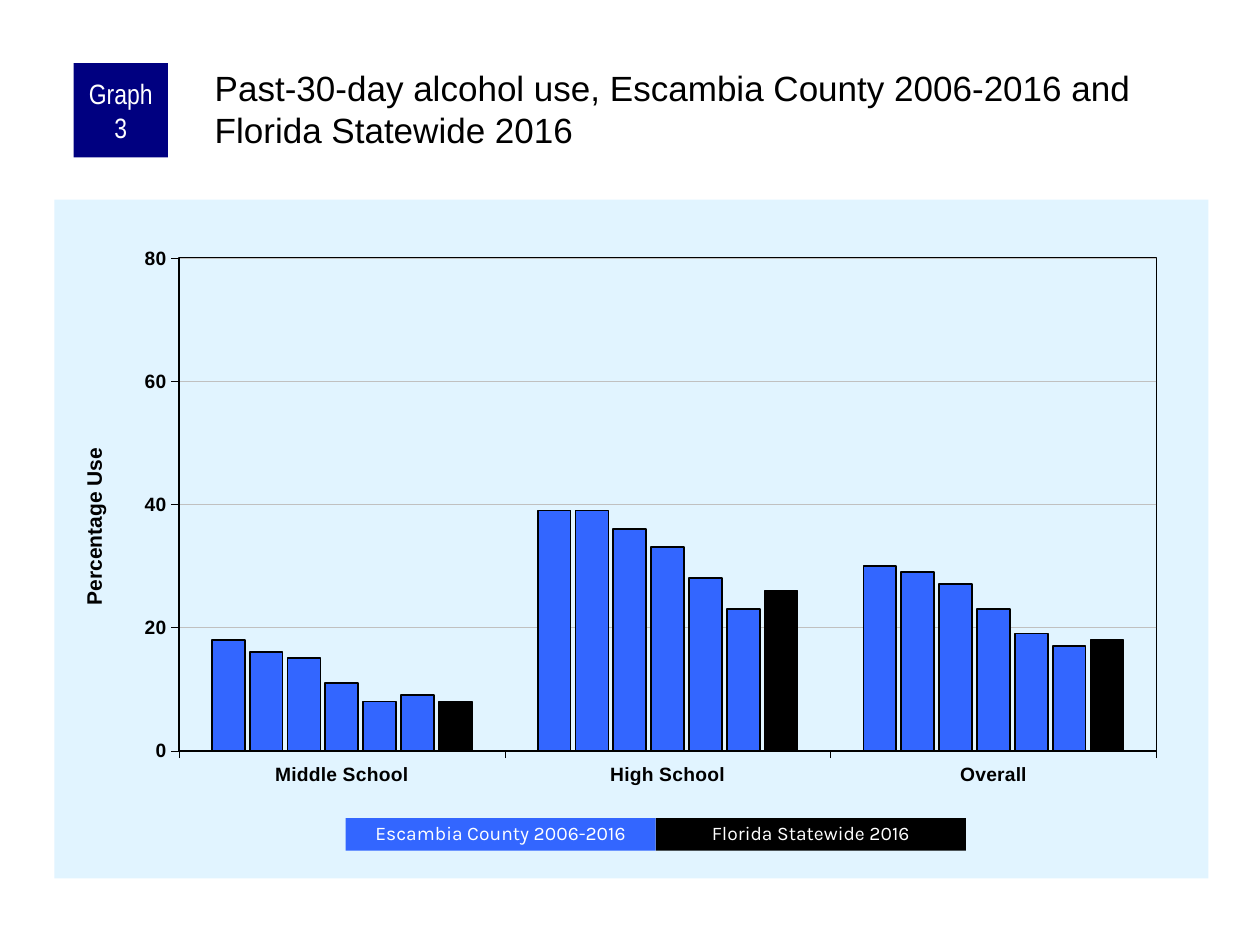
from lxml.etree import fromstring
from pptx import Presentation
from pptx.chart.data import CategoryChartData as Data
from pptx.dml.color import RGBColor
from pptx.enum.chart import XL_CHART_TYPE as Kind, XL_TICK_MARK as Tick
from pptx.enum.shapes import MSO_SHAPE as Shape
from pptx.enum.text import MSO_ANCHOR as Anchor, PP_ALIGN as Align
from pptx.oxml.ns import qn
from pptx.util import Pt

NAVY = RGBColor(0x00, 0x00, 0x80)
BLUE = RGBColor(0x33, 0x66, 0xFF)
PALE = RGBColor(0xE1, 0xF4, 0xFF)
GRAY = RGBColor(0xC0, 0xC0, 0xC0)
BLACK = RGBColor(0, 0, 0)
WHITE = RGBColor(0xFF, 0xFF, 0xFF)

LEVELS = ["Middle School", "High School", "Overall"]
RATES = [(18, 39, 30), (16, 39, 29), (15, 36, 27), (11, 33, 23),
         (8, 28, 19), (9, 23, 17), (8, 26, 18)]
SPACES = ('xmlns:c="http://schemas.openxmlformats.org/drawingml/2006/chart" '
          'xmlns:a="http://schemas.openxmlformats.org/drawingml/2006/main"')


def assign(item, **values):
    for name, value in values.items():
        setattr(item, name, value)


def style(font, size, color, name="Arial", bold=False):
    assign(font, size=Pt(size), name=name, bold=bold)
    font.color.rgb = color


def stroke(line, color, width):
    line.color.rgb = color
    line.width = Pt(width)


def write(shape, text, font, frame, para):
    body = shape.text_frame
    assign(body, word_wrap=True, **frame)
    first = body.paragraphs[0]
    assign(first, **para)
    run = first.add_run()
    run.text = text
    style(run.font, **font)


def block(slide, box, fill, text, font, frame, para):
    rect = slide.shapes.add_shape(Shape.RECTANGLE, *map(Pt, box))
    rect.shadow.inherit = False
    rect.fill.solid()
    rect.fill.fore_color.rgb = fill
    rect.line.fill.background()
    write(rect, text, font, dict(vertical_anchor=Anchor.MIDDLE, **frame),
          dict(alignment=Align.CENTER, **para))


def header(slide, left, top, width):
    block(slide, (left, top, 54, 54), NAVY, "Graph 3",
          dict(size=16, color=WHITE, name="Arial Narrow"),
          dict(margin_left=Pt(3.6), margin_right=Pt(3.6),
               margin_top=0, margin_bottom=0), {})
    inset = 78.5
    title = slide.shapes.add_textbox(
        Pt(left + inset), Pt(top), Pt(width - inset), Pt(60))
    write(title,
          "Past-30-day alcohol use, Escambia County 2006-2016 "
          "and Florida Statewide 2016",
          dict(size=20, color=BLACK),
          dict(margin_left=Pt(2.2), margin_top=Pt(2.2),
               margin_right=0, margin_bottom=0), {})


def layout(x, y, size="", target=""):
    """Return a manual chart layout in fractions of the chart."""
    return fromstring(
        f'<c:layout {SPACES}><c:manualLayout>{target}'
        '<c:xMode val="edge"/><c:yMode val="edge"/>'
        f'<c:x val="{x}"/><c:y val="{y}"/>{size}'
        '</c:manualLayout></c:layout>')


def relay(node, new):
    """Put a layout in a plot area or an axis title."""
    for old in node.findall(qn("c:layout")):
        node.remove(old)
    text = node.find(qn("c:tx"))
    if text is None:
        node.insert(0, new)
    else:
        text.addnext(new)


def paint(chart):
    """Fill the chart area and frame the plot area."""
    area = chart.element.find(qn("c:chart"))
    area.addnext(fromstring(
        f'<c:spPr {SPACES}><a:solidFill><a:srgbClr val="{PALE}"/>'
        '</a:solidFill><a:ln><a:noFill/></a:ln></c:spPr>'))
    plot = area.find(qn("c:plotArea"))
    relay(plot, layout(0.108, 0.086,
                       '<c:w val="0.847"/><c:h val="0.726"/>',
                       '<c:layoutTarget val="inner"/>'))
    plot.append(fromstring(
        f'<c:spPr {SPACES}><a:noFill/><a:ln w="12700"><a:solidFill>'
        f'<a:srgbClr val="{BLACK}"/></a:solidFill></a:ln></c:spPr>'))


def axes(chart):
    rates = chart.value_axis
    for axis in (chart.category_axis, rates):
        assign(axis, major_tick_mark=Tick.OUTSIDE, minor_tick_mark=Tick.NONE)
        style(axis.tick_labels.font, 11, BLACK, bold=True)
        stroke(axis.format.line, BLACK, 0.25)
    assign(rates, minimum_scale=0, maximum_scale=80, major_unit=20,
           has_major_gridlines=True)
    stroke(rates.major_gridlines.format.line, GRAY, 0.25)
    title = rates.axis_title
    title.text_frame.text = "Percentage Use"
    style(title.text_frame.paragraphs[0].runs[0].font, 12, BLACK, bold=True)
    relay(title.element if hasattr(title, "element") else title._element,
          layout(0.02, 0.36))


def graph(slide, left, top, width, height):
    data = Data()
    data.categories = LEVELS
    for num, row in enumerate(RATES, 1):
        data.add_series(f"Series {num}", row)
    chart = slide.shapes.add_chart(
        Kind.COLUMN_CLUSTERED, *map(Pt, (left, top, width, height)), data).chart
    assign(chart, has_legend=False, has_title=False)
    style(chart.font, 8, BLACK)
    plot = chart.plots[0]
    assign(plot, gap_width=200, overlap=-15, vary_by_categories=False)
    for num, bars in enumerate(plot.series, 1):
        bars.format.fill.solid()
        bars.format.fill.fore_color.rgb = BLACK if num == len(RATES) else BLUE
        stroke(bars.format.line, BLACK, 1)
    axes(chart)
    paint(chart)


def legend(slide, left, top, width, height):
    keys = [("Escambia County 2006-2016", BLUE),
            ("Florida Statewide 2016", BLACK)]
    step = width / len(keys)
    for num, (text, fill) in enumerate(keys):
        block(slide, (left + num * step, top, step, height), fill, text,
              dict(size=11, color=WHITE, name="Karla"), {},
              dict(line_spacing=0.9))


def main():
    deck = Presentation()
    assign(deck, slide_width=Pt(720), slide_height=Pt(540))
    slide = deck.slides.add_slide(deck.slide_layouts[6])
    graph(slide, 31, 114, 659.5, 388)
    header(slide, 42, 36, 648.5)
    legend(slide, 197.5, 467.5, 354.5, 18.7)
    deck.save("out.pptx")


if __name__ == "__main__":
    main()
